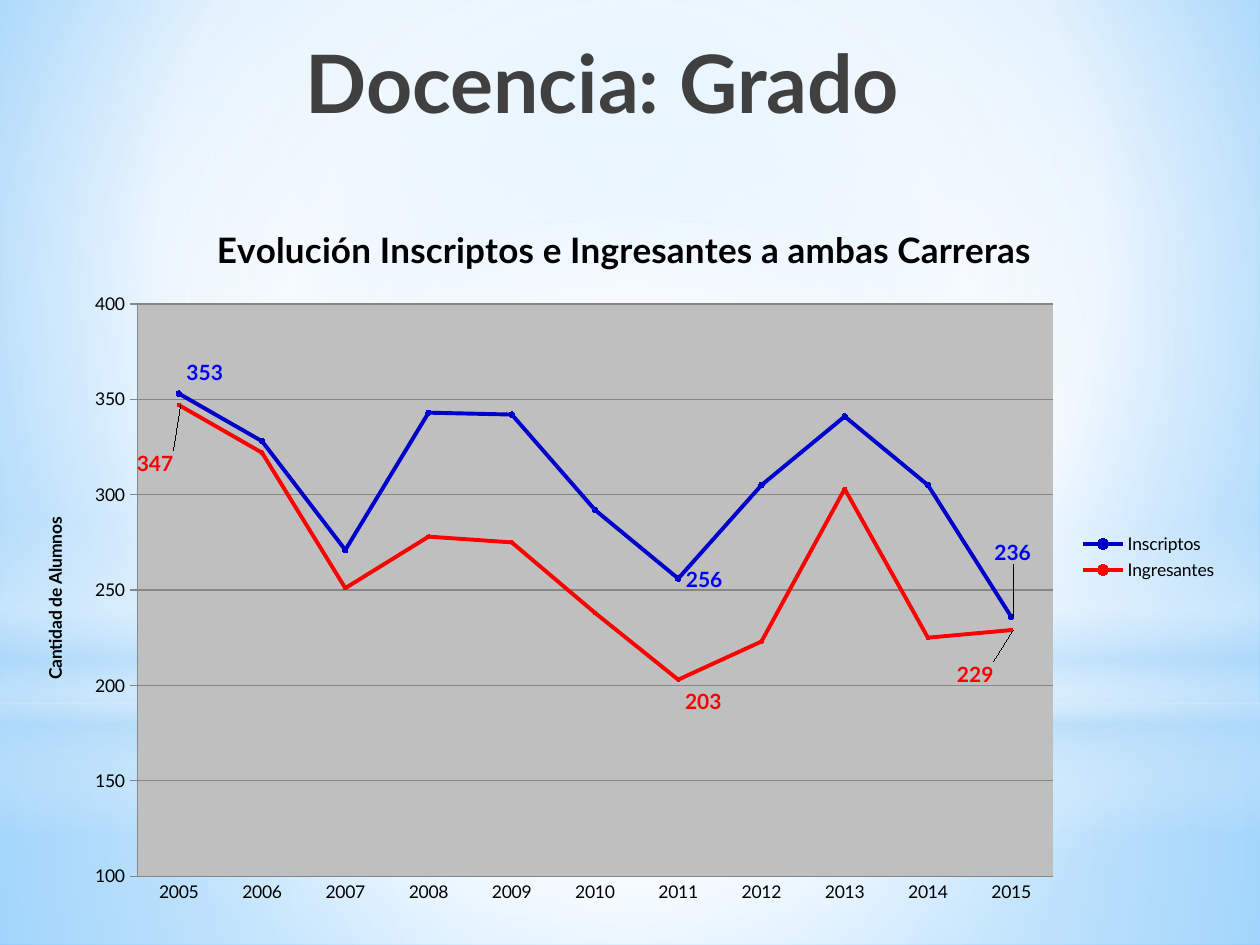
from lxml.etree import fromstring
from pptx import Presentation
from pptx.chart.data import CategoryChartData
from pptx.dml.color import RGBColor
from pptx.enum.chart import (XL_CHART_TYPE, XL_LABEL_POSITION, XL_LEGEND_POSITION,
                             XL_MARKER_STYLE, XL_TICK_MARK)
from pptx.enum.shapes import MSO_SHAPE
from pptx.enum.text import MSO_ANCHOR, PP_ALIGN
from pptx.oxml.ns import nsdecls
from pptx.util import Inches, Pt

FONT = "Lato"
COLORS = {
    "white": "FFFFFF", "sky": "B4DCFA", "light": "9ED5FF", "deep": "5BB9FF",
    "title": "404040", "text": "000000", "plot": "BFBFBF", "axis": "868686",
    "blue": "0000CC", "blue_label": "0000FF", "red": "FF0000",
}
CENTER = (50, 50, 50, 50)
GLOWS = [
    (MSO_SHAPE.RECTANGLE, 5.58, 1.92,
     [(0, "white", 91), (37, "white", 76), (100, "sky", 79)], CENTER),
    (MSO_SHAPE.RECTANGLE, 0, 5.58,
     [(0, "white", 89), (48, "white", 62), (100, "sky", 79)], CENTER),
    (MSO_SHAPE.RECTANGLE, 4.12, 2.5,
     [(0, "white", 0), (29, "white", 30), (45, "sky", 40), (55, "white", 26),
      (65, "sky", 60), (100, "white", 0)], None),
    (MSO_SHAPE.OVAL, 1.75, 5.58, [(0, "white", 100), (56, "white", 0)], CENTER),
]
YEARS = [str(year) for year in range(2005, 2016)]
SERIES = [
    ("Inscriptos", [353, 328, 271, 343, 342, 292, 256, 305, 341, 305, 236],
     "blue", "blue_label", 3, {0: (0, -0.03), 6: None, 10: (-0.02, -0.09)}),
    ("Ingresantes", [347, 322, 251, 278, 275, 238, 203, 223, 303, 225, 229],
     "red", "red", 2, {0: (-0.04, 0.08), 6: (0, 0.03), 10: (-0.05, 0.06)}),
]


def rgb(name):
    """Return the named colour."""
    return RGBColor.from_string(COLORS[name])


def style_font(font, size, color="text", bold=False):
    """Set face, size, colour and weight of a font."""
    font.name, font.size, font.bold = FONT, Pt(size), bold
    font.color.rgb = rgb(color)


def set_gradient(element, stops, focus):
    """Replace the solid fill of an element by a circular or vertical gradient."""
    gs = "".join(
        f'<a:gs pos="{pos * 1000}"><a:srgbClr val="{COLORS[color]}">'
        f'<a:alpha val="{alpha * 1000}"/></a:srgbClr></a:gs>'
        for pos, color, alpha in stops)
    if focus:
        sides = " ".join(f'{k}="{v * 1000}"' for k, v in zip("ltrb", focus))
        way = f'<a:path path="circle"><a:fillToRect {sides}/></a:path>'
    else:
        way = '<a:lin ang="5400000" scaled="0"/>'
    solid = element.xpath(".//a:solidFill")[0]
    solid.getparent().replace(solid, fromstring(
        f'<a:gradFill {nsdecls("a")} rotWithShape="1"><a:gsLst>{gs}</a:gsLst>{way}</a:gradFill>'))


def add_background(s):
    """Fill the slide background and lay the soft glows over it."""
    s.background.fill.solid()
    set_gradient(s.element.xpath(".//p:bgPr")[0],
                 [(0, "light", 100), (60, "white", 100), (100, "deep", 100)],
                 (20, 10, 20, 60))
    for kind, top, height, stops, focus in GLOWS:
        sp = s.shapes.add_shape(kind, 0, Inches(top), Inches(10), Inches(height))
        sp.shadow.inherit = False
        sp.line.fill.background()
        sp.fill.solid()
        set_gradient(sp.element.spPr, stops, focus)


def add_title(s, text):
    """Add the centred slide title."""
    tf = s.shapes.add_textbox(Inches(1.22), Inches(0.21), Inches(7.12), Inches(1.25)).text_frame
    tf.word_wrap = True
    tf.vertical_anchor = MSO_ANCHOR.TOP
    p = tf.paragraphs[0]
    p.text = text
    p.alignment = PP_ALIGN.CENTER
    style_font(p.runs[0].font, 46, "title", True)


def layout(x, y, size=None, edge=True):
    """Return a manual chart layout in fractions of the chart."""
    target = '<c:layoutTarget val="inner"/>' if size else ""
    modes = '<c:xMode val="edge"/><c:yMode val="edge"/>' if edge else ""
    extent = f'<c:w val="{size[0]}"/><c:h val="{size[1]}"/>' if size else ""
    return fromstring(
        f'<c:layout {nsdecls("c")}><c:manualLayout>{target}{modes}'
        f'<c:x val="{x}"/><c:y val="{y}"/>{extent}</c:manualLayout></c:layout>')


def place(parent, after, new):
    """Put a layout into a chart part, after the named child if given."""
    for old in parent.xpath("./c:layout"):
        parent.remove(old)
    found = parent.xpath(f"./c:{after}") if after else []
    if found:
        found[0].addnext(new)
    else:
        parent.insert(0, new)


def set_chart_text(owner, text, size, x, y):
    """Write a bold chart or axis title at a fixed place."""
    tf = owner.text_frame
    tf.text = text
    style_font(tf.paragraphs[0].runs[0].font, size, bold=True)
    place(tf._txBody.getparent().getparent(), "tx", layout(x, y))


def show_leader_lines(labels):
    """Switch on the lines between moved labels and their points."""
    for old in labels.xpath("./c:showLeaderLines"):
        labels.remove(old)
    labels.append(fromstring(f'<c:showLeaderLines {nsdecls("c")} val="1"/>'))


def style_series(series, color, label_color, marker_size, offsets):
    """Style a line with its markers and its few value labels."""
    series.smooth = False
    series.format.line.color.rgb = rgb(color)
    series.format.line.width = Pt(2.25)
    marker = series.marker
    marker.style, marker.size = XL_MARKER_STYLE.CIRCLE, marker_size
    marker.format.fill.solid()
    marker.format.fill.fore_color.rgb = rgb(color)
    marker.format.line.color.rgb = rgb(color)
    labels = series.data_labels
    labels.show_value = False
    for index, offset in offsets.items():
        label = series.points[index].data_label
        style_font(label.font, 12, label_color, True)
        label.position = XL_LABEL_POSITION.RIGHT
        if offset:
            dlbl = series._element.xpath(f'.//c:dLbl[c:idx/@val="{index}"]')[0]
            place(dlbl, "idx", layout(*offset, edge=False))
    show_leader_lines(series._element.xpath("./c:dLbls")[0])


def style_axes(chart):
    """Set scale, ticks, gridlines and fonts of both axes."""
    cat, val = chart.category_axis, chart.value_axis
    val.minimum_scale, val.maximum_scale, val.major_unit = 100, 400, 50
    cat.major_tick_mark, val.major_tick_mark = XL_TICK_MARK.NONE, XL_TICK_MARK.OUTSIDE
    val.has_major_gridlines = True
    for line in (cat.format.line, val.format.line, val.major_gridlines.format.line):
        line.color.rgb = rgb("axis")
        line.width = Pt(0.75)
    for axis in (cat, val):
        style_font(axis.tick_labels.font, 10)
    set_chart_text(val.axis_title, "Cantidad de Alumnos", 10, 0.02, 0.44)


def add_line_chart(s):
    """Add the line chart of enrolled and admitted students."""
    data = CategoryChartData()
    data.categories = YEARS
    for name, values, *_ in SERIES:
        data.add_series(name, values)
    chart = s.shapes.add_chart(XL_CHART_TYPE.LINE_MARKERS, Inches(0.12), Inches(1.55),
                               Inches(9.69), Inches(5.75), data).chart
    style_font(chart.font, 10)
    set_chart_text(chart.chart_title, "Evolución Inscriptos e Ingresantes a ambas Carreras",
                   20, 0.16, 0.03)
    style_axes(chart)
    chart.plots[0].vary_by_categories = False
    for series, (_, _, *style) in zip(chart.plots[0].series, SERIES):
        style_series(series, *style)
    chart.has_legend = True
    chart.legend.position = XL_LEGEND_POSITION.RIGHT
    chart.legend.include_in_layout = False
    style_font(chart.legend.font, 10)
    place(chart.legend._element, "legendPos", layout(0.87, 0.46))
    area = chart._chartSpace.xpath(".//c:plotArea")[0]
    place(area, None, layout(0.1, 0.15, (0.75, 0.79)))
    area.append(fromstring(
        f'<c:spPr {nsdecls("c", "a")}><a:solidFill><a:srgbClr val="{COLORS["plot"]}"/>'
        '</a:solidFill><a:ln><a:noFill/></a:ln></c:spPr>'))


def main():
    """Build the slide and save it."""
    prs = Presentation()
    prs.slide_width, prs.slide_height = Inches(10), Inches(7.5)
    s = prs.slides.add_slide(prs.slide_layouts[6])
    add_background(s)
    add_title(s, "Docencia: Grado")
    add_line_chart(s)
    prs.save("out.pptx")


if __name__ == "__main__":
    main()
